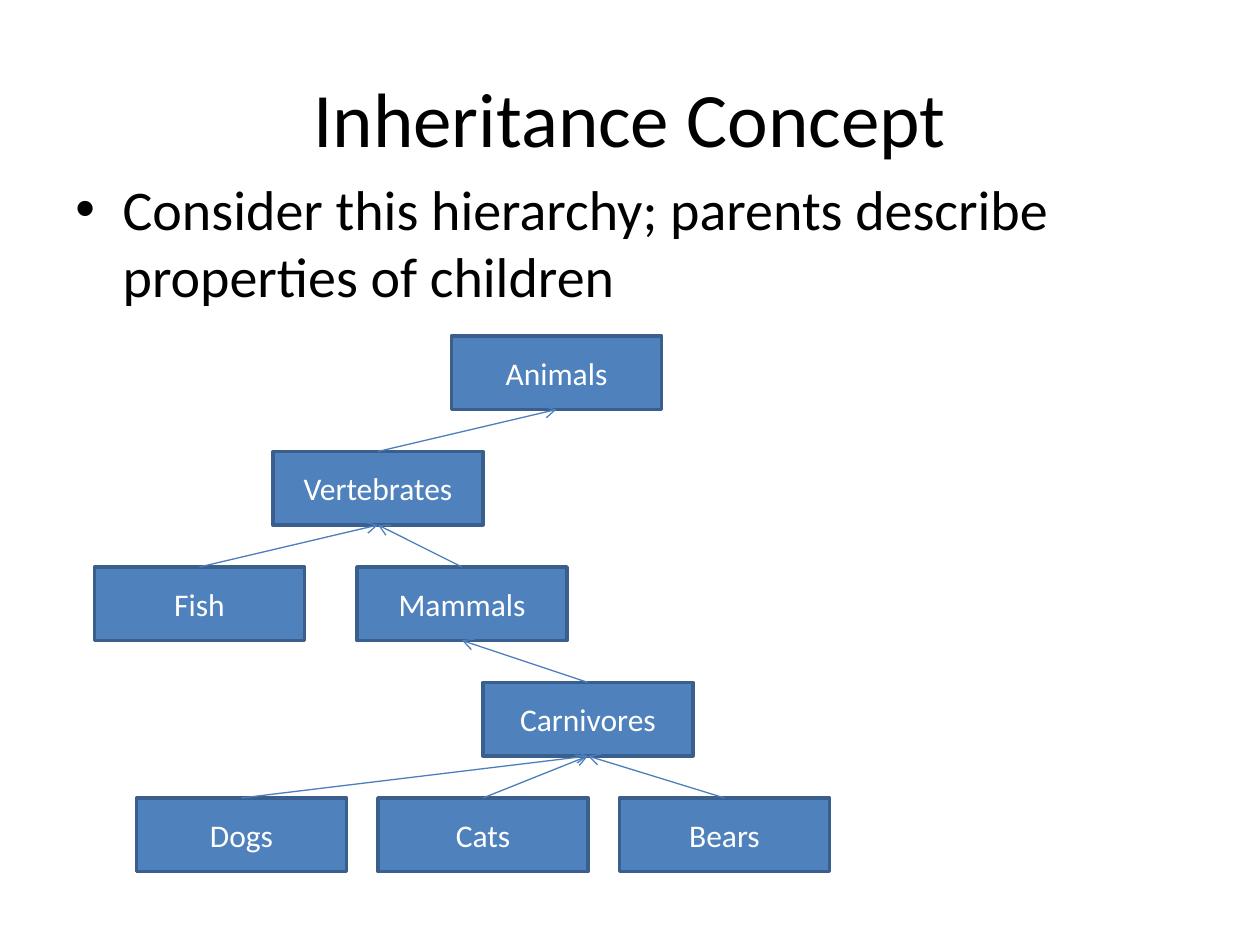
"""Build the inheritance concept slide with its animal hierarchy."""
import pptx
import pptx.dml.color
import pptx.enum.shapes
import pptx.enum.text
import pptx.oxml
import pptx.oxml.ns
import pptx.util

Pt = pptx.util.Pt
ALIGN = pptx.enum.text.PP_ALIGN
ANCHOR = pptx.enum.text.MSO_ANCHOR


def color(value):
    return pptx.dml.color.RGBColor.from_string(value)


def write(box, text, size, ink="000000", align=ALIGN.CENTER, anchor=ANCHOR.MIDDLE):
    frame = box.text_frame
    frame.word_wrap = True
    frame.vertical_anchor = anchor
    para = frame.paragraphs[0]
    para.alignment = align
    span = para.add_run()
    span.text = text
    span.font.name = "Calibri"
    span.font.size = Pt(size)
    span.font.color.rgb = color(ink)
    return para


deck = pptx.Presentation()
deck.slide_width, deck.slide_height = Pt(720), Pt(540)
page = deck.slides.add_slide(deck.slide_layouts[6])

title = page.shapes.add_textbox(Pt(36), Pt(21.6), Pt(648), Pt(90))
write(title, "Inheritance Concept", 44)

body = page.shapes.add_textbox(Pt(36), Pt(96), Pt(648), Pt(356))
para = write(body, "Consider this hierarchy; parents describe properties of children", 32,
             align=ALIGN.LEFT, anchor=ANCHOR.TOP)
para.space_before = Pt(6.4)
properties = para._p.get_or_add_pPr()
properties.set("marL", str(Pt(27)))
properties.set("indent", str(Pt(-27)))
namespace = pptx.oxml.ns.nsdecls("a")
properties.append(pptx.oxml.parse_xml(f'<a:buFont {namespace} typeface="Arial"/>'))
properties.append(pptx.oxml.parse_xml(f'<a:buChar {namespace} char="•"/>'))

animals = [
    ("Animals", 258, 0, None),
    ("Vertebrates", 156, 1, "Animals"),
    ("Mammals", 204, 2, "Vertebrates"),
    ("Fish", 54, 2, "Vertebrates"),
    ("Carnivores", 276, 3, "Mammals"),
    ("Bears", 354, 4, "Carnivores"),
    ("Cats", 216, 4, "Carnivores"),
    ("Dogs", 78, 4, "Carnivores"),
]
boxes = {}
for name, left, level, parent in animals:
    box = page.shapes.add_shape(pptx.enum.shapes.MSO_SHAPE.RECTANGLE,
                                Pt(left), Pt(192 + 66 * level), Pt(120), Pt(42))
    box.shadow.inherit = False
    box.fill.solid()
    box.fill.fore_color.rgb = color("4F81BD")
    box.line.color.rgb = color("3A5F8C")
    box.line.width = Pt(2)
    write(box, name, 18, ink="FFFFFF")
    boxes[name] = box

for name, left, level, parent in animals:
    if parent is None:
        continue
    arrow = page.shapes.add_connector(pptx.enum.shapes.MSO_CONNECTOR.STRAIGHT, 0, 0, 0, 0)
    arrow.begin_connect(boxes[name], 0)
    arrow.end_connect(boxes[parent], 2)
    arrow.line.color.rgb = color("4B7EBC")
    arrow.line.width = Pt(0.75)
    arrow.line._get_or_add_ln().append(
        pptx.oxml.parse_xml(f'<a:tailEnd {namespace} type="arrow"/>'))
    arrow._element.spPr.append(pptx.oxml.parse_xml(f"<a:effectLst {namespace}/>"))

deck.save("out.pptx")
